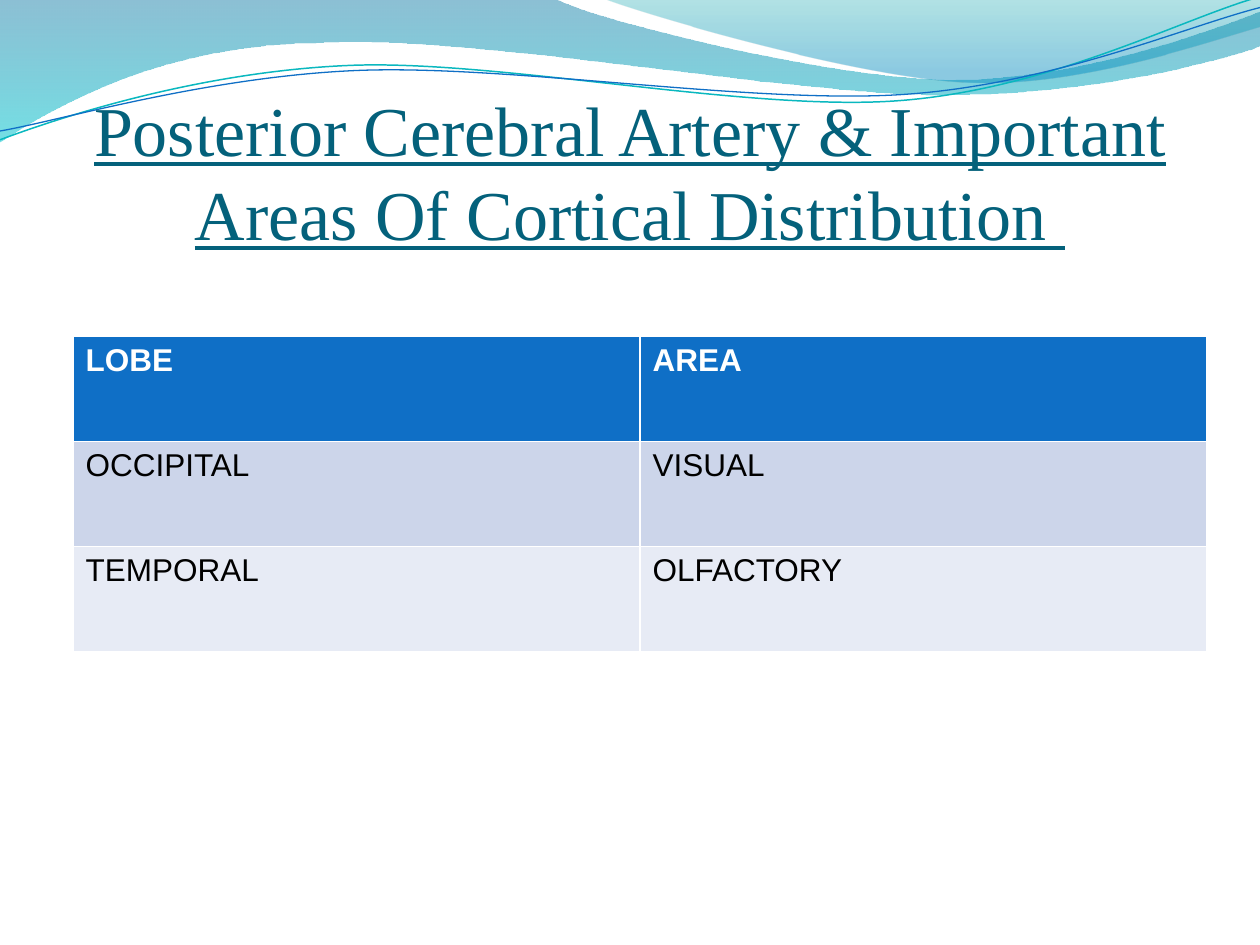
from dataclasses import dataclass

from lxml import etree
from pptx import Presentation
from pptx import util as u
from pptx.dml.color import RGBColor
from pptx.enum import text
from pptx.oxml.ns import qn

WHITE = RGBColor(0xFF, 0xFF, 0xFF)
BLACK = RGBColor(0, 0, 0)
BLUE = RGBColor(0x0F, 0x6F, 0xC6)
TEAL = RGBColor(0x0A, 0xB8, 0xBF)
TITLE_COLOR = RGBColor(0x04, 0x61, 0x7B)
BANDS = [RGBColor(0xCC, 0xD5, 0xEA), RGBColor(0xE7, 0xEB, 0xF5)]
WIDTH, HEIGHT = 10, 7.5

Point = tuple[float, float]


@dataclass
class Stop:
    position: float
    color: RGBColor
    opacity: int


@dataclass
class Wave:
    """Segments hold one point for a line, three for a cubic curve."""
    start: Point
    segments: list[list[Point]]
    stops: tuple[Stop, ...] = ()
    line: RGBColor | None = None
    weight: float = 0


WAVES = [
    Wave((0, -0.01), [
        [(4.4, -0.01)],
        [(4.76, 0.17), (6.64, 0.63), (7.58, 0.63)],
        [(8.53, 0.63), (9.58, 0.26), (10, 0.09)],
        [(10.01, 0.36)],
        [(9.83, 0.44), (8.7, 0.76), (7.46, 0.75)],
        [(6.22, 0.75), (3.82, 0.28), (2.57, 0.34)],
        [(1.29, 0.35), (0.46, 0.83), (-0.01, 1.13)],
        [(0, -0.01)],
    ], stops=(Stop(0, RGBColor(0, 0x74, 0xA1), 45), Stop(1, RGBColor(0, 0xC6, 0xCF), 55))),
    Wave((4.79, -0.01), [
        [(5.09, 0.11), (6.82, 0.62), (7.69, 0.65)],
        [(8.56, 0.69), (9.61, 0.32), (10, 0.21)],
        [(10, 0)],
        [(4.79, -0.01)],
    ], stops=(Stop(0, RGBColor(0, 0xA1, 0xA9), 30), Stop(0.8, RGBColor(0, 0x8B, 0xBF), 45))),
    Wave((0, 1.11), [
        [(0.48, 0.93), (1.58, 0.57), (2.77, 0.52)],
        [(3.95, 0.47), (5.93, 0.89), (7.13, 0.8)],
        [(8.33, 0.71), (9.38, 0.15), (9.98, -0.02)],
    ], line=TEAL, weight=0.85),
    Wave((0, 1.04), [
        [(0.47, 0.96), (1.64, 0.61), (2.83, 0.56)],
        [(4.03, 0.51), (5.97, 0.83), (7.17, 0.75)],
        [(8.36, 0.67), (9.41, 0.21), (10, 0.06)],
    ], line=BLUE, weight=0.75),
]

ROWS = [("LOBE", "AREA"), ("OCCIPITAL", "VISUAL"), ("TEMPORAL", "OLFACTORY")]


def emu(point: Point) -> tuple[int, int]:
    return u.Inches(point[0]), u.Inches(point[1])


def bend_segments(sp, segments: list[list[Point]]) -> None:
    """Join each three straight steps of a cubic segment into one curve."""
    steps = iter(list(sp._element.iter(qn("a:lnTo"))))
    for segment in segments:
        group = [next(steps) for _ in segment]
        if len(group) == 3:
            curve = etree.Element(qn("a:cubicBezTo"))
            group[0].addprevious(curve)
            for step in group:
                curve.append(step[0])
                step.getparent().remove(step)


def draw_wave(slide, wave: Wave) -> None:
    builder = slide.shapes.build_freeform(*emu(wave.start))
    points = [emu(point) for segment in wave.segments for point in segment]
    builder.add_line_segments(points, close=bool(wave.stops))
    sp = builder.convert_to_shape()
    bend_segments(sp, wave.segments)
    sp.shadow.inherit = False
    if wave.line is not None:
        sp.fill.background()
        sp.line.color.rgb = wave.line
        sp.line.width = u.Pt(wave.weight)
        return
    sp.line.fill.background()
    sp.fill.gradient()
    sp.fill.gradient_angle = 270
    for target, stop in zip(sp.fill.gradient_stops, wave.stops):
        target.position = stop.position
        target.color.rgb = stop.color
    for color, stop in zip(sp._element.spPr.iter(qn("a:srgbClr")), wave.stops):
        etree.SubElement(color, qn("a:alpha"), val=str(stop.opacity * 1000))


def format_run(r, font: str, size: float, color: RGBColor) -> None:
    r.font.name = font
    r.font.size = u.Pt(size)
    r.font.color.rgb = color


def draw_title(slide) -> None:
    title = slide.shapes.title
    title.left, title.top = u.Inches(0.05 * WIDTH), u.Inches(0.77)
    title.width, title.height = u.Inches(0.9 * WIDTH), u.Inches(HEIGHT / 6)
    tf = title.text_frame
    tf.text = "Posterior Cerebral Artery & Important Areas Of Cortical Distribution "
    tf.word_wrap = True
    tf.auto_size = text.MSO_AUTO_SIZE.NONE
    tf.vertical_anchor = text.MSO_ANCHOR.BOTTOM
    tf.margin_left = tf.margin_right = tf.margin_bottom = 0
    tf.margin_top = u.Inches(0.05)
    p = tf.paragraphs[0]
    p.alignment = text.PP_ALIGN.CENTER
    r = p.runs[0]
    format_run(r, "Times New Roman", 40, TITLE_COLOR)
    r.font.underline = True
    slide.shapes._spTree.append(title._element)  # in front of the waves


def draw_table(slide) -> None:
    """The default table style supplies the white borders."""
    table = slide.shapes.add_table(
        len(ROWS), len(ROWS[0]), u.Inches(0.58), u.Inches(2.67),
        u.Inches(0.9 * WIDTH), u.Inches(HEIGHT / 3)).table
    for i, row in enumerate(ROWS):
        header = i == 0
        for j, value in enumerate(row):
            cell = table.cell(i, j)
            cell.text = value
            cell.fill.solid()
            cell.fill.fore_color.rgb = BLUE if header else BANDS[(i - 1) % 2]
            r = cell.text_frame.paragraphs[0].runs[0]
            format_run(r, "Arial", 18, WHITE if header else BLACK)
            r.font.bold = header


def main() -> None:
    prs = Presentation()
    prs.slide_width, prs.slide_height = u.Inches(WIDTH), u.Inches(HEIGHT)
    slide = prs.slides.add_slide(prs.slide_layouts.get_by_name("Title Only"))
    for wave in WAVES:
        draw_wave(slide, wave)
    draw_title(slide)
    draw_table(slide)
    prs.save("out.pptx")


if __name__ == "__main__":
    main()
